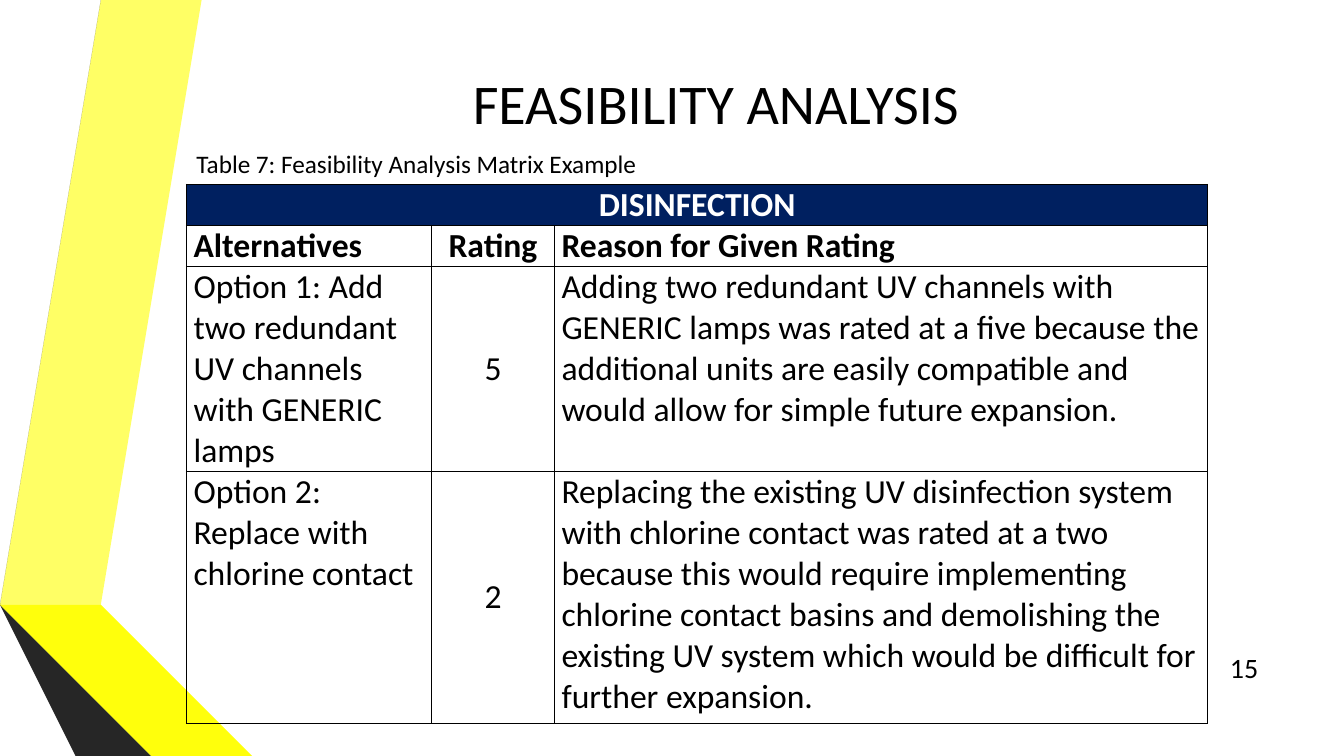
from dataclasses import dataclass

from lxml.etree import SubElement
from pptx import Presentation
from pptx.dml.color import RGBColor
from pptx.enum.text import MSO_ANCHOR as Anchor, PP_ALIGN as Align
from pptx.oxml import parse_xml
from pptx.oxml.ns import nsdecls, qn
from pptx.slide import Slide
from pptx.table import _Cell as Cell
from pptx.text.text import TextFrame
from pptx.util import Inches, Pt

FONT = "Calibri"
COLORS = {
    "black": "000000",
    "white": "FFFFFF",
    "navy": "002060",
    "pale_yellow": "FFFF65",
    "yellow": "FFFF0C",
    "olive": "B2B200",
    "gray": "595959",
    "dark_gray": "404040",
    "charcoal": "262626",
}


@dataclass(frozen=True)
class Ribbon:
    color: str
    points: tuple[tuple[float, float], ...]


@dataclass(frozen=True)
class Label:
    text: str
    left: float
    top: float
    width: float
    height: float
    size: int
    align: Align
    anchor: Anchor


RIBBONS = (
    Ribbon("pale_yellow", ((0.5, 5.78), (0.77, 5.83), (1.73, 0), (1.45, 0))),
    Ribbon("gray", ((1.39, 0), (1.11, 0), (0.16, 5.73), (0.44, 5.77))),
    Ribbon("charcoal", ((0.16, 5.73), (1.45, 7.5), (1.51, 7.5))),
    Ribbon("olive", ((0.5, 5.79), (2.08, 7.5), (2.14, 7.5))),
    Ribbon("yellow", ((0.5, 5.78), (0.5, 5.79), (2.14, 7.5), (2.83, 7.5), (0.77, 5.83))),
    Ribbon("dark_gray", ((2.02, 7.5), (0.48, 5.83), (0.43, 5.78), (0.44, 5.77),
                         (0.16, 5.73), (1.51, 7.5))),
)

TITLE = Label("FEASIBILITY ANALYSIS", 1.62, 0.05, 10.96, 1.92, 40, Align.CENTER, Anchor.MIDDLE)
LABELS = (
    Label("15", 11.98, 6.42, 0.6, 0.4, 20, Align.RIGHT, Anchor.MIDDLE),
    Label("Table 7: Feasibility Analysis Matrix Example",
          1.85, 1.42, 5.06, 0.4, 18, Align.LEFT, Anchor.TOP),
)

COLUMN_WIDTHS = (2.43, 1.22, 6.48)
ROW_HEIGHTS = (0.36, 0.36, 1.79, 2.5)
RATING_COLUMN = 1
ROWS = (
    ("DISINFECTION", "", ""),
    ("Alternatives", "Rating", "Reason for Given Rating"),
    ("Option 1: Add two redundant UV channels with GENERIC lamps", "5",
     "Adding two redundant UV channels with GENERIC lamps was rated at a five because "
     "the additional units are easily compatible and would allow for simple future expansion."),
    ("Option 2: Replace with chlorine contact", "2",
     "Replacing the existing UV disinfection system with chlorine contact was rated at a two "
     "because this would require implementing chlorine contact basins and demolishing the "
     "existing UV system which would be difficult for further expansion."),
)


def write_text(frame: TextFrame, text: str, size: int, align: Align,
               color: str = "black", bold: bool = False) -> None:
    frame.text = text
    paragraph = frame.paragraphs[0]
    paragraph.alignment = align
    font = paragraph.font
    font.name = FONT
    font.size = Pt(size)
    font.bold = bold
    font.color.rgb = RGBColor.from_string(COLORS[color])


def draw_ribbon(slide: Slide, ribbon: Ribbon) -> None:
    start, *others = ribbon.points
    builder = slide.shapes.build_freeform(*start, scale=Inches(1))
    builder.add_line_segments(others, close=True)
    shape = builder.convert_to_shape()
    shape.shadow.inherit = False
    shape.fill.solid()
    shape.fill.fore_color.rgb = RGBColor.from_string(COLORS[ribbon.color])
    shape.line.fill.background()


def place_label(shape, label: Label) -> None:
    shape.left, shape.top = Inches(label.left), Inches(label.top)
    shape.width, shape.height = Inches(label.width), Inches(label.height)
    frame = shape.text_frame
    frame.word_wrap = True
    frame.vertical_anchor = label.anchor
    write_text(frame, label.text, label.size, label.align)


def add_borders(cell: Cell) -> None:
    properties = cell._tc.get_or_add_tcPr()
    for index, side in enumerate(("lnL", "lnR", "lnT", "lnB")):
        border = parse_xml(f'<a:{side} {nsdecls("a")} w="{Pt(1)}"/>')
        fill = SubElement(border, qn("a:solidFill"))
        SubElement(fill, qn("a:srgbClr"), val=COLORS["black"])
        properties.insert(index, border)


def format_cell(cell: Cell, text: str, row: int, column: int) -> None:
    is_banner = row == 0
    is_centered = is_banner or column == RATING_COLUMN
    cell.margin_left = cell.margin_right = Inches(0.07)
    cell.margin_top = cell.margin_bottom = 0
    cell.vertical_anchor = Anchor.MIDDLE if is_centered else Anchor.TOP
    if is_banner:
        cell.fill.solid()
        cell.fill.fore_color.rgb = RGBColor.from_string(COLORS["navy"])
    else:
        cell.fill.background()
    write_text(cell.text_frame, text, 24, Align.CENTER if is_centered else Align.LEFT,
               "white" if is_banner else "black", bold=row < 2)
    add_borders(cell)


def draw_matrix(slide: Slide) -> None:
    frame = slide.shapes.add_table(
        len(ROWS), len(COLUMN_WIDTHS), Inches(1.85), Inches(1.83),
        Inches(sum(COLUMN_WIDTHS)), Inches(sum(ROW_HEIGHTS)))
    table = frame.table
    table.horz_banding = False
    for column, width in zip(table.columns, COLUMN_WIDTHS):
        column.width = Inches(width)
    for row, height in zip(table.rows, ROW_HEIGHTS):
        row.height = Inches(height)
    table.cell(0, 0).merge(table.cell(0, len(COLUMN_WIDTHS) - 1))
    for row, texts in enumerate(ROWS):
        for column, text in enumerate(texts):
            format_cell(table.cell(row, column), text, row, column)


def main() -> None:
    presentation = Presentation()
    presentation.slide_width = Inches(13.33)
    presentation.slide_height = Inches(7.5)
    slide = presentation.slides.add_slide(presentation.slide_layouts[5])
    for ribbon in RIBBONS:
        draw_ribbon(slide, ribbon)
    place_label(slide.shapes.title, TITLE)
    draw_matrix(slide)
    for label in LABELS:
        place_label(slide.shapes.add_textbox(0, 0, 0, 0), label)
    presentation.save("out.pptx")


if __name__ == "__main__":
    main()
